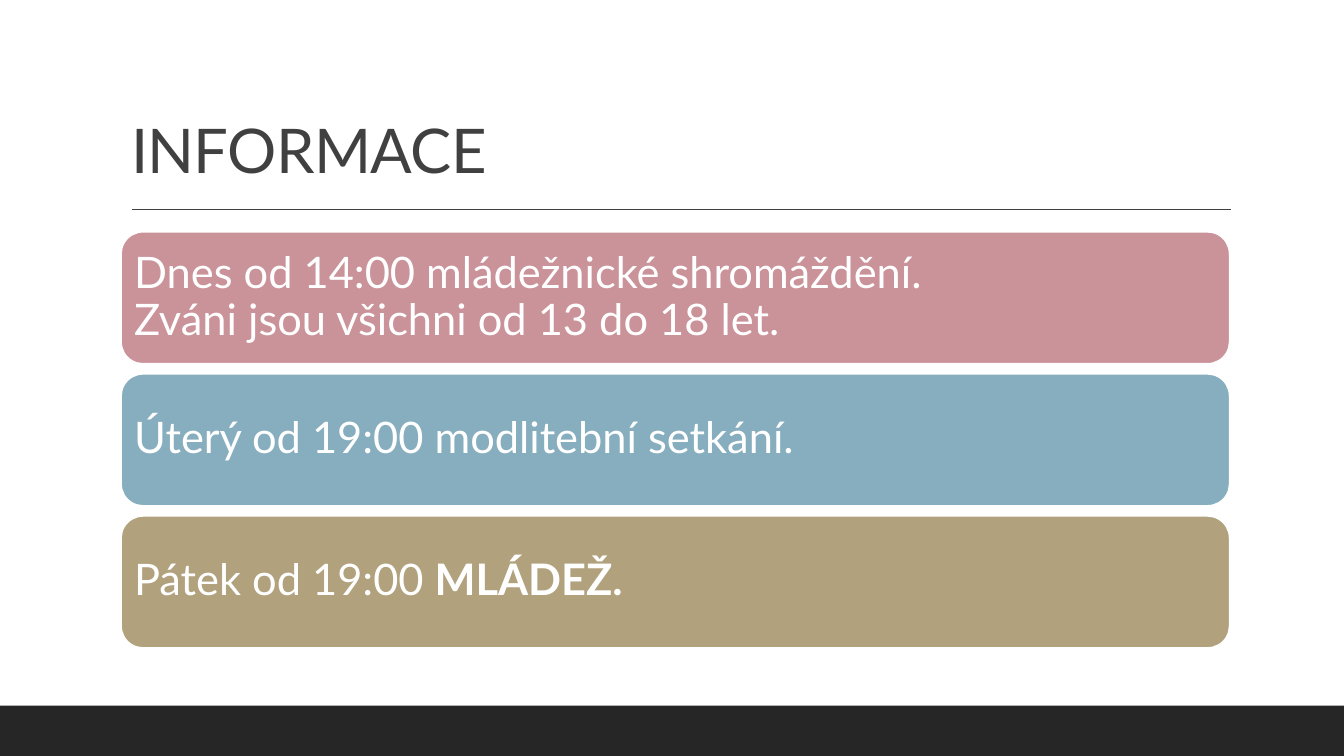
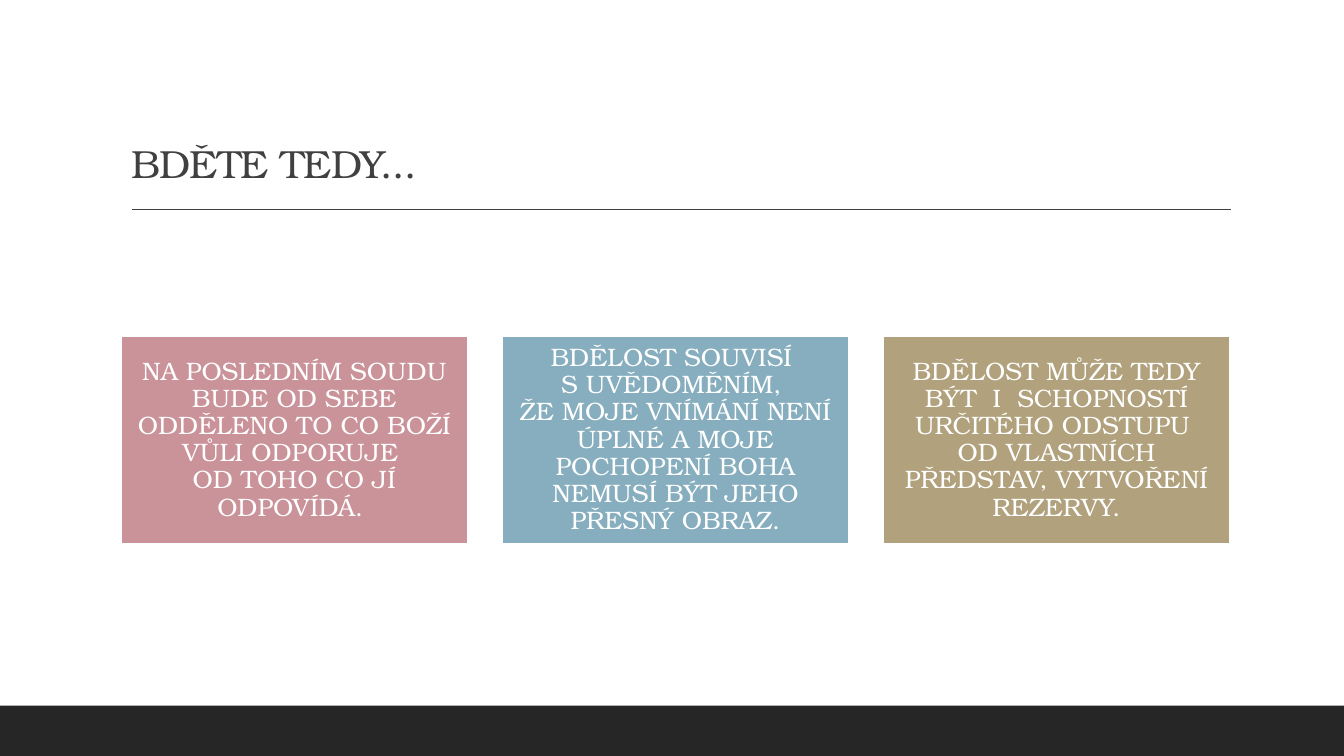
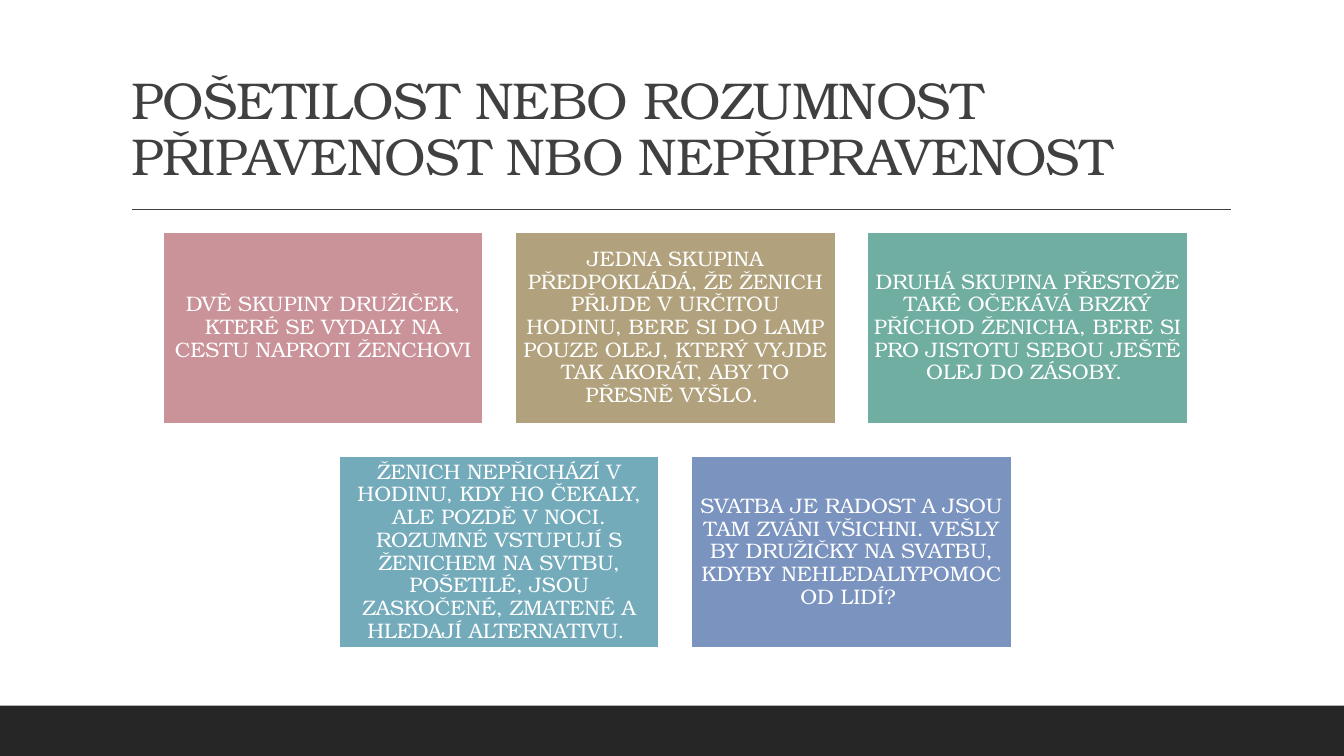
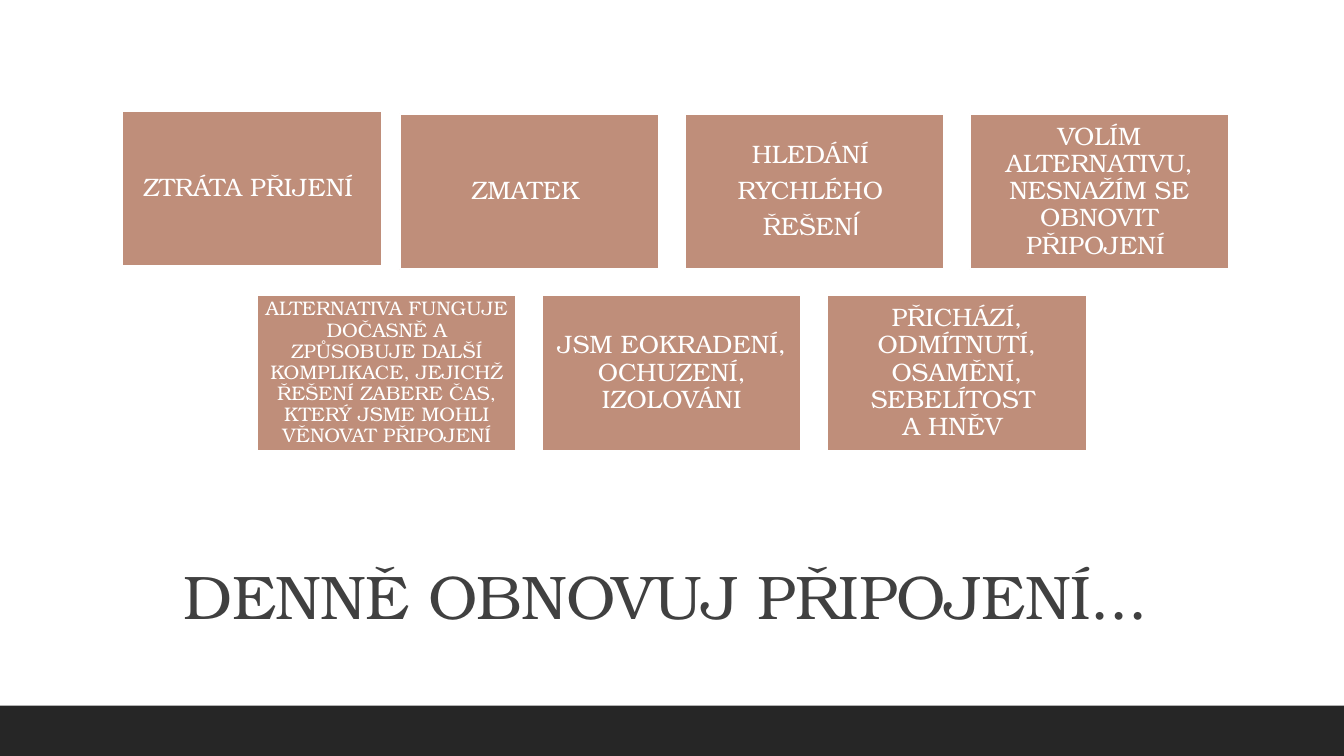
from dataclasses import dataclass

from pptx import Presentation
from pptx.dml.color import RGBColor
from pptx.enum.shapes import MSO_CONNECTOR, MSO_SHAPE
from pptx.enum.text import MSO_ANCHOR as ANCHOR, MSO_AUTO_SIZE as AUTO, PP_ALIGN as ALIGN
from pptx.oxml.ns import qn
from pptx.util import Cm, Pt

# Shared look
WHITE = RGBColor(0xFF, 0xFF, 0xFF)
INK = RGBColor(0x40, 0x40, 0x40)
BAND = RGBColor(0x26, 0x26, 0x26)
ROSE = RGBColor(0xCA, 0x92, 0x99)
BLUE = RGBColor(0x87, 0xAE, 0xBE)
SAND = RGBColor(0xB1, 0xA2, 0x7D)
GREEN = RGBColor(0x70, 0xAE, 0xA2)
TEAL = RGBColor(0x73, 0xAB, 0xBB)
INDIGO = RGBColor(0x7A, 0x93, 0xBF)
CLAY = RGBColor(0xBF, 0x8E, 0x7A)
SANS = "Lato"
SERIF = "TeX Gyre Bonum"
SLIDE_W, SLIDE_H, BAND_H = 33.87, 19.05, 1.27


@dataclass
class Box:
    """A region of the slide, in centimetres."""
    x: float
    y: float
    w: float
    h: float

    def lengths(self):
        return Cm(self.x), Cm(self.y), Cm(self.w), Cm(self.h)


TITLE_BOX = Box(3.05, 0.79, 27.94, 4.04)
BODY_BOX = Box(3.05, 5.84, 27.94, 10.49)
CLOSING_BOX = Box(3.05, 13.46, 27.94, 3.3)
CHAIN_BOX = Box(2.88, 2.87, 28.1, 8.49)


def add_run(p, text, size, font, color, bold=None, spacing=None):
    """Add text to a paragraph, with a line break at each newline."""
    for i, line in enumerate(text.split("\n")):
        if i:
            p.add_line_break()
        r = p.add_run()
        r.text = line
        r.font.size, r.font.name, r.font.bold = Pt(size), font, bold
        r.font.color.rgb = color
        if spacing:
            r.font._element.set("spc", str(round(spacing * 100)))


def add_rect(slide, box, fill, shape=MSO_SHAPE.RECTANGLE, line=None):
    sp = slide.shapes.add_shape(shape, *box.lengths())
    sp.shadow.inherit = False
    sp.fill.solid()
    sp.fill.fore_color.rgb = fill
    if line is None:
        sp.line.fill.background()
    else:
        sp.line.color.rgb, sp.line.width = line, Pt(1.25)
    return sp


def add_card(slide, box, fill, paragraphs, size, font, align=ALIGN.CENTER,
             shape=MSO_SHAPE.RECTANGLE, inset=0.17):
    """A filled card; each paragraph is a list of (text, run overrides)."""
    sp = add_rect(slide, box, fill, shape, WHITE)
    tf = sp.text_frame
    tf.word_wrap, tf.vertical_anchor = True, ANCHOR.MIDDLE
    tf.margin_left = tf.margin_right = tf.margin_top = tf.margin_bottom = Cm(inset)
    for i, runs in enumerate(paragraphs):
        p = tf.add_paragraph() if i else tf.paragraphs[0]
        p.alignment, p.line_spacing = align, 0.9
        p.space_before = Pt(0.35 * size if i else 0)
        for text, changes in runs:
            add_run(p, text, **{"size": size, "font": font, "color": WHITE, **changes})


def add_title(slide, box, text, size, font, align=ALIGN.LEFT, anchor=ANCHOR.BOTTOM):
    sp = slide.shapes.title
    sp.left, sp.top, sp.width, sp.height = box.lengths()
    tf = sp.text_frame
    tf.word_wrap, tf.auto_size, tf.vertical_anchor = True, AUTO.NONE, anchor
    p = tf.paragraphs[0]
    p.alignment, p.line_spacing = align, 0.9
    add_run(p, text, size, font, INK, spacing=-0.5)


def add_rule(slide, box):
    """Line under the title box."""
    y = Cm(box.y + box.h + 0.45)
    ln = slide.shapes.add_connector(
        MSO_CONNECTOR.STRAIGHT, Cm(box.x + 0.28), y, Cm(box.x + box.w + 0.02), y)
    ln.line.color.rgb, ln.line.width = INK, Pt(1)
    sp_pr = ln._element.spPr
    sp_pr.append(sp_pr.makeelement(qn("a:effectLst"), {}))


def new_slide(prs):
    """Title-only slide with the dark bottom band."""
    slide = prs.slides.add_slide(prs.slide_layouts[5])
    add_rect(slide, Box(0, SLIDE_H - BAND_H, SLIDE_W, BAND_H), BAND)
    return slide


def titled_slide(prs, text, size, font):
    slide = new_slide(prs)
    add_title(slide, TITLE_BOX, text, size, font)
    add_rule(slide, TITLE_BOX)
    return slide


def plain(text, **changes):
    """Content of a card with a single run."""
    return [[(text, changes)]]


def add_bars(slide, box, bars, gap=0.25):
    """Full-width rounded bars stacked in the box."""
    h = (box.h - gap * (len(bars) - 1)) / len(bars)
    for i, (fill, paragraphs) in enumerate(bars):
        add_card(slide, Box(box.x, box.y + i * (h + gap), box.w, h), fill, paragraphs,
                 31, SANS, ALIGN.LEFT, MSO_SHAPE.ROUNDED_RECTANGLE)


def add_tiles(slide, box, rows, size, first_shift=(0, 0)):
    """Centred rows of 5:3 tiles, with gaps of a tenth of their width."""
    columns = max(len(row) for row in rows)
    w = min(box.w / (1.1 * columns - 0.1), box.h / (0.7 * len(rows) - 0.1))
    h, gap = 0.6 * w, 0.1 * w
    top = box.y + (box.h - len(rows) * (h + gap) + gap) / 2
    for i, row in enumerate(rows):
        left = box.x + (box.w - len(row) * (w + gap) + gap) / 2
        for j, (fill, paragraphs) in enumerate(row):
            dx, dy = first_shift if i == j == 0 else (0, 0)
            tile = Box(left + j * (w + gap) + dx, top + i * (h + gap) + dy, w, h)
            add_card(slide, tile, fill, paragraphs, size, SERIF,
                     inset=0.17 if size > 15 else 0.15)


def information_slide(prs):
    slide = titled_slide(prs, "INFORMACE", 44, SANS)
    add_bars(slide, BODY_BOX, [
        (ROSE, plain("Dnes od 14:00 mládežnické shromáždění.\n"
                     "Zváni jsou všichni od 13 do 18 let.")),
        (BLUE, plain("Úterý od 19:00 modlitební setkání.")),
        (SAND, [[("Pátek od 19:00 ", {}), ("MLÁDEŽ.", {"bold": True})]]),
    ])


def watch_slide(prs):
    slide = titled_slide(prs, "BDĚTE TEDY...", 28, SERIF)
    add_tiles(slide, BODY_BOX, [[
        (ROSE, plain("NA POSLEDNÍM SOUDU BUDE OD SEBE ODDĚLENO TO CO BOŽÍ VŮLI ODPORUJE \n"
                     "OD TOHO CO JÍ ODPOVÍDÁ. ")),
        (BLUE, plain("BDĚLOST SOUVISÍ \nS UVĚDOMĚNÍM, \nŽE MOJE VNÍMÁNÍ NENÍ ÚPLNÉ "
                     "A MOJE POCHOPENÍ BOHA NEMUSÍ BÝT JEHO PŘESNÝ OBRAZ.")),
        (SAND, plain("BDĚLOST MŮŽE TEDY BÝT  I  SCHOPNOSTÍ URČITÉHO ODSTUPU \n"
                     "OD VLASTNÍCH PŘEDSTAV, VYTVOŘENÍ REZERVY.")),
    ]], 18)


def parable_slide(prs):
    slide = titled_slide(
        prs, "POŠETILOST NEBO ROZUMNOST\nPŘIPAVENOST NBO NEPŘIPRAVENOST", 37, SERIF)
    add_tiles(slide, BODY_BOX, [
        [
            (ROSE, plain("DVĚ SKUPINY DRUŽIČEK, KTERÉ SE VYDALY NA CESTU NAPROTI ŽENCHOVI")),
            (SAND, plain("JEDNA SKUPINA PŘEDPOKLÁDÁ, ŽE ŽENICH PŘIJDE V URČITOU HODINU, "
                         "BERE SI DO LAMP POUZE OLEJ, KTERÝ VYJDE TAK AKORÁT, "
                         "ABY TO PŘESNĚ VYŠLO. ")),
            (GREEN, plain("DRUHÁ SKUPINA PŘESTOŽE TAKÉ OČEKÁVÁ BRZKÝ PŘÍCHOD ŽENICHA, "
                          "BERE SI PRO JISTOTU SEBOU JEŠTĚ OLEJ DO ZÁSOBY. ")),
        ],
        [
            (TEAL, plain("ŽENICH NEPŘICHÁZÍ V HODINU, KDY HO ČEKALY, ALE POZDĚ V NOCI. "
                         "ROZUMNÉ VSTUPUJÍ S ŽENICHEM NA SVTBU, POŠETILÉ, JSOU "
                         "ZASKOČENÉ, ZMATENÉ A HLEDAJÍ ALTERNATIVU. ")),
            (INDIGO, plain("SVATBA JE RADOST A JSOU TAM ZVÁNI VŠICHNI. VEŠLY BY DRUŽIČKY "
                           "NA SVATBU, KDYBY NEHLEDALIYPOMOC OD LIDÍ? ")),
        ],
    ], 15)


def connection_slide(prs):
    slide = new_slide(prs)
    add_title(slide, CLOSING_BOX, "DENNĚ OBNOVUJ PŘIPOJENÍ... ", 44, SERIF,
              ALIGN.CENTER, ANCHOR.MIDDLE)
    rows = [
        [
            plain("ZTRÁTA PŘIJENÍ "),
            plain("ZMATEK "),
            [[("HLEDÁNÍ ", {})], [("RYCHLÉHO ", {})],
             [("ŘEŠEN", {}), ("Í ", {"font": SANS})]],
            plain("VOLÍM ALTERNATIVU, NESNAŽÍM SE OBNOVIT PŘIPOJENÍ "),
        ],
        [
            plain("ALTERNATIVA FUNGUJE DOČASNĚ A ZPŮSOBUJE DALŠÍ KOMPLIKACE, JEJICHŽ "
                  "ŘEŠENÍ ZABERE ČAS, KTERÝ JSME MOHLI VĚNOVAT PŘIPOJENÍ", size=14),
            plain("JSM EOKRADENÍ, OCHUZENÍ, IZOLOVÁNI"),
            plain("PŘICHÁZÍ, ODMÍTNUTÍ, OSAMĚNÍ, SEBELÍTOST \nA HNĚV "),
        ],
    ]
    add_tiles(slide, CHAIN_BOX, [[(CLAY, text) for text in row] for row in rows],
              18, first_shift=(0.2, -0.08))


def main():
    prs = Presentation()
    prs.slide_width, prs.slide_height = Cm(SLIDE_W), Cm(SLIDE_H)
    information_slide(prs)
    watch_slide(prs)
    parable_slide(prs)
    connection_slide(prs)
    prs.save("out.pptx")


if __name__ == "__main__":
    main()
